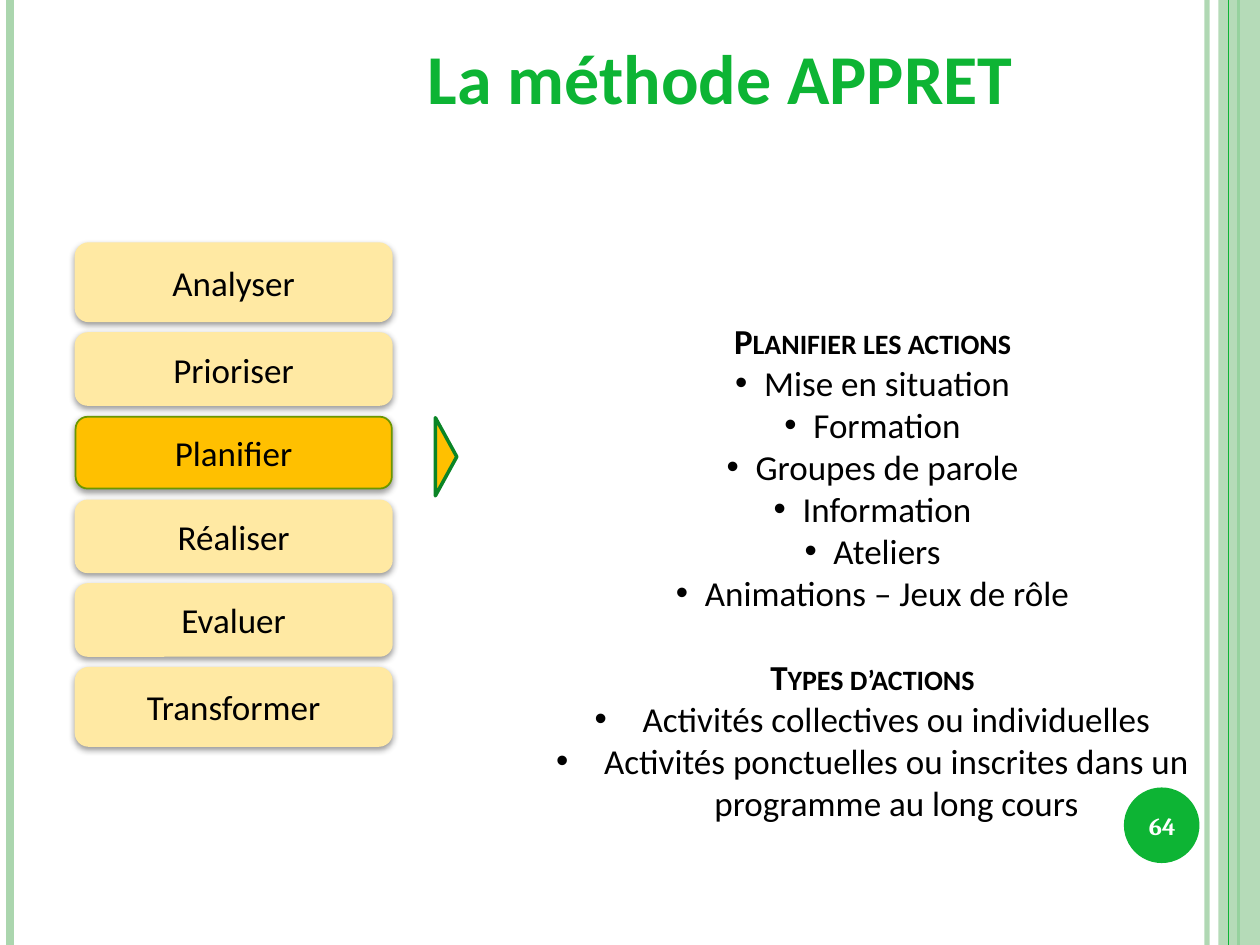
from dataclasses import dataclass

from pptx import Presentation
from pptx.dml.color import RGBColor
from pptx.enum.shapes import MSO_CONNECTOR as Connector, MSO_SHAPE as Shape
from pptx.enum.text import MSO_ANCHOR as Anchor, MSO_AUTO_SIZE as AutoSize, PP_ALIGN as Align
from pptx.oxml.ns import qn
from pptx.oxml.xmlchemy import OxmlElement
from pptx.util import Inches, Pt


@dataclass(frozen=True)
class Theme:
    """Colours, fonts and type sizes of the slide."""
    green: str = "0DB434"
    dark_green: str = "0A8526"
    pale_green: str = "ABD6AE"
    olive: str = "6B9700"
    cream: str = "FFE9A3"
    amber: str = "FFC000"
    black: str = "000000"
    white: str = "FFFFFF"
    font: str = "Calibri"
    number_font: str = "Cambria"
    title_size: int = 40
    text_size: int = 20
    number_size: int = 14


def add_element(parent, tag, **attributes):
    """Append an XML element with the given attributes and return it."""
    element = OxmlElement(tag)
    for key, value in attributes.items():
        element.set(key, str(value))
    parent.append(element)
    return element


def set_alpha(properties, percent):
    """Make the colours inside shape properties partly transparent."""
    for color in properties.iter(qn("a:srgbClr")):
        add_element(color, "a:alpha", val=percent * 1000)


class SlideBuilder:
    """Draws styled elements on one slide."""

    def __init__(self, slide, theme):
        """Keep the slide and its theme."""
        self.slide, self.theme = slide, theme

    def place(self, target, box):
        """Move and size a shape."""
        for key, value in zip(("left", "top", "width", "height"), box):
            setattr(target, key, Inches(value))

    def add_text(self, paragraph, text, color, **formats):
        """Add one centred run to a paragraph."""
        paragraph.alignment = Align.CENTER
        run = paragraph.add_run()
        run.text = text
        run.font.color.rgb = RGBColor.from_string(color)
        style = {"name": self.theme.font, "size": Pt(self.theme.text_size), "bold": False}
        for key, value in (style | formats).items():
            setattr(run.font, key, value)
        return run

    def frame(self, target, anchor=Anchor.MIDDLE):
        """Prepare the text frame of a shape."""
        text_frame = target.text_frame
        settings = {"word_wrap": True, "auto_size": AutoSize.NONE, "vertical_anchor": anchor}
        for key, value in settings.items():
            setattr(text_frame, key, value)
        return text_frame

    def stripe(self, x, color, width, opacity=100):
        """Draw a vertical line over the whole slide height."""
        line = self.slide.shapes.add_connector(
            Connector.STRAIGHT, Inches(x), 0, Inches(x), Inches(7.5))
        line.line.color.rgb = RGBColor.from_string(color)
        line.line.width = Pt(width)
        add_element(line.element.spPr, "a:effectLst")
        if opacity < 100:
            set_alpha(line.element.spPr, opacity)

    def shape(self, kind, box, fill, outline=None, width=1):
        """Draw a filled preset shape without shadow."""
        drawn = self.slide.shapes.add_shape(kind, *map(Inches, box))
        drawn.shadow.inherit = False
        drawn.fill.solid()
        drawn.fill.fore_color.rgb = RGBColor.from_string(fill)
        if outline:
            drawn.line.color.rgb = RGBColor.from_string(outline)
            drawn.line.width = Pt(width)
        else:
            drawn.line.fill.background()
        return drawn

    def step(self, label, box, fill, outline):
        """Draw a rounded step button with a soft shadow."""
        button = self.shape(Shape.ROUNDED_RECTANGLE, box, fill, outline)
        effects = button.element.spPr.find(qn("a:effectLst"))
        shadow = add_element(effects, "a:outerShdw", blurRad=Pt(4), dist=Pt(1.6),
                             dir=90 * 60000, rotWithShape=0)
        add_element(shadow, "a:srgbClr", val=self.theme.black)
        set_alpha(effects, 42)
        self.add_text(self.frame(button).paragraphs[0], label, self.theme.black)

    def title(self, text, box):
        """Fill the title placeholder."""
        heading = self.slide.shapes.title
        self.place(heading, box)
        self.add_text(self.frame(heading, Anchor.BOTTOM).paragraphs[0], text, self.theme.green,
                      size=Pt(self.theme.title_size), bold=True)

    def number(self, text, box):
        """Add the slide number."""
        label = self.slide.shapes.add_textbox(*map(Inches, box))
        self.add_text(self.frame(label).paragraphs[0], text, self.theme.white, bold=True,
                      name=self.theme.number_font, size=Pt(self.theme.number_size))

    def paragraph(self, text_frame, text, indent=0, before=0):
        """Add a bulleted item, or a small-caps heading when there is no indent."""
        first = text_frame.paragraphs[0]
        paragraph = text_frame.add_paragraph() if first.runs else first
        properties = paragraph._p.get_or_add_pPr()
        properties.set("marL", str(Inches(indent)))
        properties.set("indent", str(-Inches(indent)))
        if indent:
            add_element(properties, "a:buFont", typeface="Arial")
            add_element(properties, "a:buChar", char="•")
        else:
            add_element(properties, "a:buNone")
        paragraph.space_before = Pt(before)
        run = self.add_text(paragraph, text, self.theme.black, bold=not indent)
        if not indent:
            run._r.get_or_add_rPr().set("cap", "small")

    def body(self, sections, box):
        """Fill the body placeholder with headed lists."""
        content = self.slide.placeholders[1]
        self.place(content, box)
        text_frame = self.frame(content)
        for index, (heading, indent, items) in enumerate(sections):
            self.paragraph(text_frame, heading, before=24 if index else 0)
            for item in items:
                self.paragraph(text_frame, item, indent)


def main():
    """Build the slide and save it."""
    theme = Theme()
    presentation = Presentation()
    presentation.slide_width, presentation.slide_height = Inches(10), Inches(7.5)
    slide = presentation.slides.add_slide(presentation.slide_layouts[1])
    builder = SlideBuilder(slide, theme)

    builder.stripe(9.58, theme.pale_green, 3, 93)
    builder.stripe(0.08, theme.pale_green, 4.5)
    builder.stripe(9.83, theme.green, 1.5)
    band = builder.shape(Shape.RECTANGLE, (9.67, 0, 0.33, 7.5), theme.pale_green)
    set_alpha(band.element.spPr, 87)
    builder.stripe(9.75, theme.green, 0.75)
    builder.shape(Shape.OVAL, (8.92, 6.25, 0.6, 0.6), theme.green)
    builder.number("64", (8.89, 6.27, 0.67, 0.57))

    builder.title("La méthode APPRET", (1.86, 0.19, 7.71, 0.8))

    steps = ("Analyser", "Prioriser", "Planifier", "Réaliser", "Evaluer", "Transformer")
    heights = (0.62, 0.57, 0.57, 0.57, 0.57, 0.62)
    top, bottom = 1.93, 5.92
    gap = (bottom - top - sum(heights)) / (len(steps) - 1)
    for label, height in zip(steps, heights):
        current = label == "Planifier"
        fill, outline = (theme.amber, theme.olive) if current else (theme.cream, theme.cream)
        builder.step(label, (0.6, top, 2.51, height), fill, outline)
        top += height + gap

    pointer = builder.shape(Shape.ISOSCELES_TRIANGLE, (3.23, 3.54, 0.62, 0.17),
                            theme.amber, theme.dark_green, 2)
    pointer.rotation = 90

    builder.body((
        ("Planifier les actions", 0.23, (
            "Mise en situation", "Formation", "Groupes de parole", "Information",
            "Ateliers", "Animations – Jeux de rôle")),
        ("Types d’actions", 0.38, (
            "Activités collectives ou individuelles",
            "Activités ponctuelles ou inscrites dans un programme au long cours")),
    ), (4.13, 2.49, 5.59, 4.09))

    presentation.save("out.pptx")


if __name__ == "__main__":
    main()
